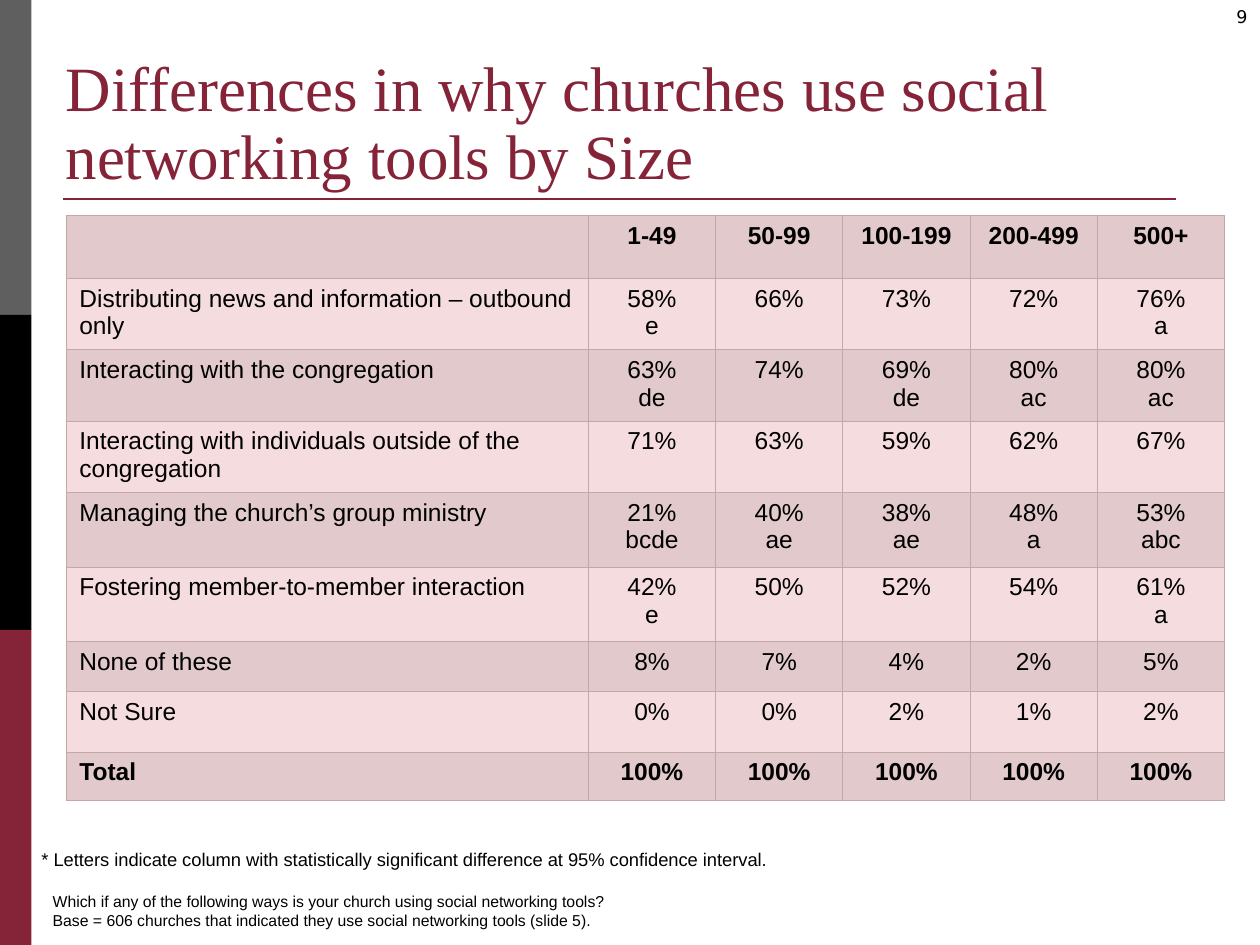
from lxml import etree
from pptx import Presentation
from pptx.dml.color import RGBColor
from pptx.enum.shapes import MSO_CONNECTOR, MSO_SHAPE
from pptx.enum.text import MSO_ANCHOR, PP_ALIGN
from pptx.oxml.ns import qn
from pptx.util import Inches, Pt

COLORS = {
    "gray": "5F5F5F",
    "black": "000000",
    "wine": "852338",
    "band_dark": "E2C9CB",
    "band_light": "F5DCDF",
    "border": "C3A8AA",
}
SIZES = ["1-49", "50-99", "100-199", "200-499", "500+"]
REASONS = [
    ("Distributing news and information – outbound only",
     ["58%\ve", "66%", "73%", "72%", "76%\va"]),
    ("Interacting with the congregation",
     ["63%\vde", "74%", "69%\vde", "80%\vac", "80%\vac"]),
    ("Interacting with individuals outside of the congregation",
     ["71%", "63%", "59%", "62%", "67%"]),
    ("Managing the church’s group ministry",
     ["21%\vbcde", "40%\vae", "38%\vae", "48%\va", "53%\vabc"]),
    ("Fostering member-to-member interaction",
     ["42%\ve", "50%", "52%", "54%", "61%\va"]),
    ("None of these", ["8%", "7%", "4%", "2%", "5%"]),
    ("Not Sure", ["0%", "0%", "2%", "1%", "2%"]),
    ("Total", ["100%"] * 5),
]
COLUMN_WIDTHS = [4.14] + [1.01] * 5
ROW_HEIGHTS = [0.5, 0.54, 0.54, 0.54, 0.59, 0.59, 0.4, 0.48, 0.38]


def color(name):
    return RGBColor.from_string(COLORS[name])


def inches(box):
    return [Inches(length) for length in box]


def style_text(para, size, font="Arial", tint="black", bold=False):
    for span in para.runs:
        span.font.size = Pt(size)
        span.font.name = font
        span.font.bold = bold
        span.font.color.rgb = color(tint)


def add_side_bar(page, box):
    """Stack three equal colour blocks down the box."""
    left, top, width, height = box
    block = height / 3
    for index, name in enumerate(["gray", "black", "wine"]):
        shape = page.shapes.add_shape(
            MSO_SHAPE.RECTANGLE, *inches((left, top + index * block, width, block)))
        shape.shadow.inherit = False
        shape.fill.solid()
        shape.fill.fore_color.rgb = color(name)
        shape.line.fill.background()


def add_title_rule(page, left, right, top):
    rule = page.shapes.add_connector(
        MSO_CONNECTOR.STRAIGHT, *inches((left, top, right, top)))
    rule.line.color.rgb = color("wine")
    rule.line.width = Pt(1.5)
    etree.SubElement(rule._element.spPr, qn("a:effectLst"))


def place_title(page, box, text):
    title = page.shapes.title
    title.left, title.top, title.width, title.height = inches(box)
    frame = title.text_frame
    frame.text = text
    frame.vertical_anchor = MSO_ANCHOR.BOTTOM
    para = frame.paragraphs[0]
    para.alignment = PP_ALIGN.LEFT
    para.line_spacing = 0.9
    style_text(para, 36, "Times New Roman", "wine")


def add_note(page, box, text, size, font="Arial", align=PP_ALIGN.LEFT):
    frame = page.shapes.add_textbox(*inches(box)).text_frame
    frame.word_wrap = True
    frame.text = text
    para = frame.paragraphs[0]
    para.alignment = align
    style_text(para, size, font)


def add_borders(cell):
    properties = cell._tc.get_or_add_tcPr()
    for side in ("lnL", "lnR", "lnT", "lnB"):
        line = etree.SubElement(properties, qn(f"a:{side}"), w=str(Pt(0.75)))
        fill = etree.SubElement(line, qn("a:solidFill"))
        etree.SubElement(fill, qn("a:srgbClr"), val=COLORS["border"])


def add_reasons_table(page, box):
    rows = [["", *SIZES]] + [[label, *shares] for label, shares in REASONS]
    table = page.shapes.add_table(len(rows), len(rows[0]), *inches(box)).table
    for column, width in zip(table.columns, COLUMN_WIDTHS):
        column.width = Inches(width)
    for row, height in zip(table.rows, ROW_HEIGHTS):
        row.height = Inches(height)

    for i, values in enumerate(rows):
        for j, value in enumerate(values):
            cell = table.cell(i, j)
            add_borders(cell)
            cell.fill.solid()
            cell.fill.fore_color.rgb = color("band_light" if i % 2 else "band_dark")
            cell.text_frame.text = value
            para = cell.text_frame.paragraphs[0]
            para.alignment = PP_ALIGN.CENTER if j else PP_ALIGN.LEFT
            style_text(para, 14, bold=i in (0, len(rows) - 1))


def main():
    deck = Presentation()
    deck.slide_width, deck.slide_height = Inches(10), Inches(7.5)
    page = deck.slides.add_slide(deck.slide_layouts[5])

    add_side_bar(page, (0, 0, 0.25, 7.5))
    add_title_rule(page, 0.5, 9.33, 1.58)
    add_note(page, (9.5, 0, 0.5, 0.33), "9", 10, "DejaVu Sans", PP_ALIGN.RIGHT)
    place_title(page, (0.42, 0.55, 9.48, 1.03),
                "Differences in why churches use social networking tools by Size")
    add_reasons_table(page, (0.53, 1.71, sum(COLUMN_WIDTHS), sum(ROW_HEIGHTS)))
    add_note(page, (0.32, 7.03, 7.66, 0.4),
             "Which if any of the following ways is your church using social "
             "networking tools?\vBase = 606 churches that indicated they use "
             "social networking tools (slide 5).", 9)
    add_note(page, (0.23, 6.68, 6.25, 0.28),
             "* Letters indicate column with statistically significant "
             "difference at 95% confidence interval.", 10.5)
    deck.save("out.pptx")


if __name__ == "__main__":
    main()
